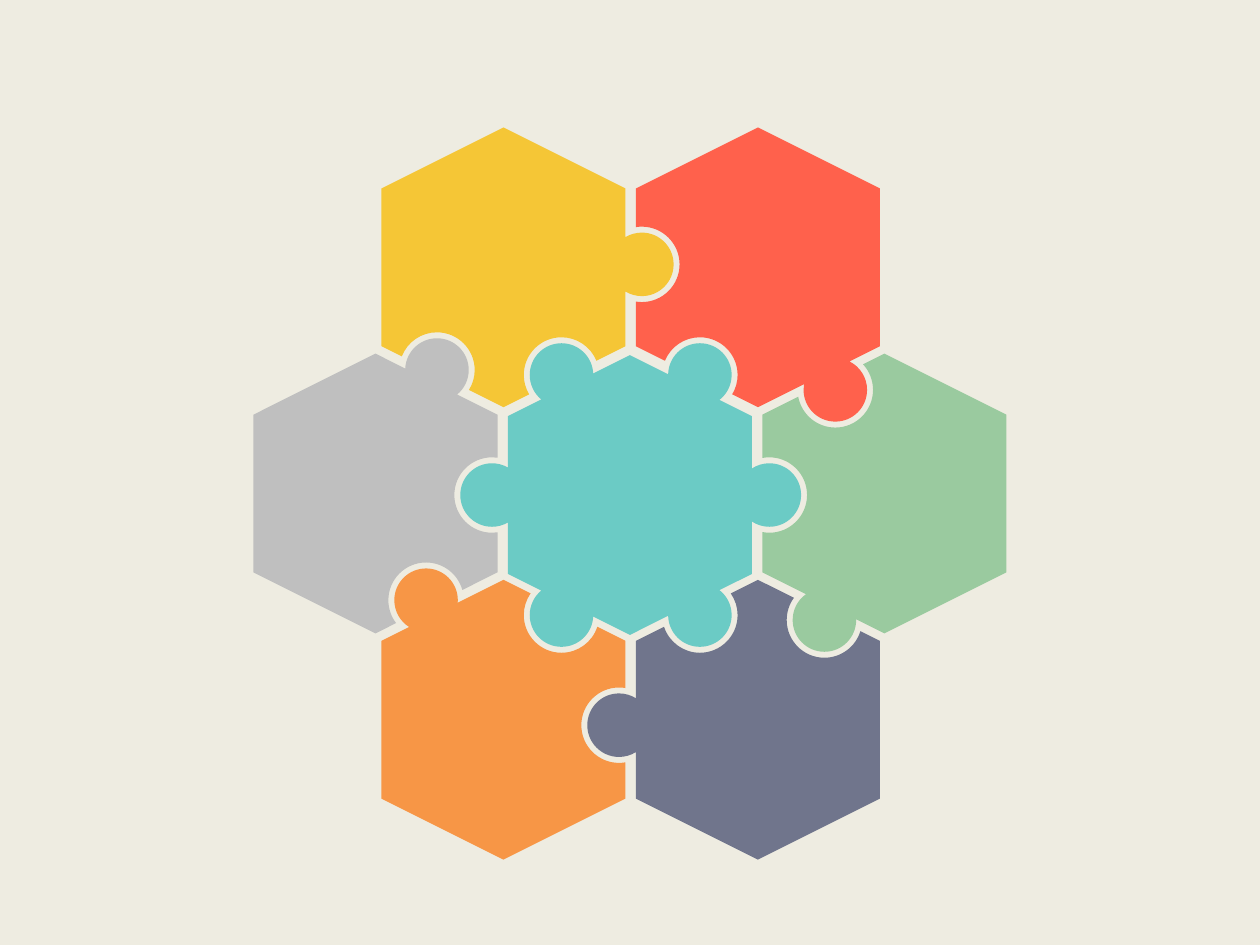
"""Build a slide with seven interlocking hexagonal puzzle pieces."""
from math import atan2, ceil, cos, dist, floor, hypot, pi, sin, sqrt, tan, tau

from lxml.etree import SubElement
from pptx import Presentation
from pptx.dml.color import RGBColor
from pptx.oxml.ns import qn
from pptx.util import Cm

CREAM = RGBColor(0xEE, 0xEC, 0xE1)
RED = RGBColor(0xFF, 0x61, 0x4C)
YELLOW = RGBColor(0xF5, 0xC6, 0x36)
GREEN = RGBColor(0x9A, 0xCA, 0x9F)
NAVY = RGBColor(0x70, 0x75, 0x8C)
ORANGE = RGBColor(0xF7, 0x96, 0x46)
GREY = RGBColor(0xBF, 0xBF, 0xBF)
TEAL = RGBColor(0x6B, 0xCB, 0xC5)

TOP_ROW, MIDDLE_ROW, BOTTOM_ROW = 5.39, 9.95, 14.51
PIECES = {
    "red": (15.28, TOP_ROW, RED),
    "yellow": (10.15, TOP_ROW, YELLOW),
    "green": (17.83, MIDDLE_ROW, GREEN),
    "navy": (15.28, BOTTOM_ROW, NAVY),
    "orange": (10.15, BOTTOM_ROW, ORANGE),
    "grey": (7.57, MIDDLE_ROW, GREY),
    "teal": (12.7, 9.98, TEAL),
}

TOP_RIGHT, RIGHT, BOTTOM_RIGHT, BOTTOM_LEFT, LEFT, TOP_LEFT = range(6)
KNOBS = [
    ("yellow", RIGHT, "red", (12.94, 5.33)),
    ("red", BOTTOM_RIGHT, "green", (16.84, 7.86)),
    ("green", BOTTOM_LEFT, "navy", (16.62, 12.5)),
    ("navy", LEFT, "orange", (12.48, 14.62)),
    ("orange", TOP_LEFT, "grey", (8.59, 12.1)),
    ("grey", TOP_RIGHT, "yellow", (8.81, 7.46)),
    ("teal", TOP_RIGHT, "red", (14.11, 7.56)),
    ("teal", RIGHT, "green", (15.51, 9.98)),
    ("teal", BOTTOM_RIGHT, "navy", (14.11, 12.4)),
    ("teal", BOTTOM_LEFT, "orange", (11.32, 12.4)),
    ("teal", LEFT, "grey", (9.92, 9.98)),
    ("teal", TOP_LEFT, "yellow", (11.32, 7.56)),
]
HALF_WIDTH, HALF_HEIGHT, SHOULDER = 2.46, 2.82, 1.59
KNOB_RADIUS, SOCKET_RADIUS = 0.64, 0.76


def hexagon(x, y):
    """Return the corners clockwise from the top."""
    left, right = x - HALF_WIDTH, x + HALF_WIDTH
    return [(x, y - HALF_HEIGHT), (right, y - SHOULDER), (right, y + SHOULDER),
            (x, y + HALF_HEIGHT), (left, y + SHOULDER), (left, y - SHOULDER)]


def joint_arc(start, end, centre, radius, outward):
    """Return the first point of an arc and its Bezier curves, split at quadrants."""
    length = dist(start, end)
    ux, uy = (end[0] - start[0]) / length, (end[1] - start[1]) / length
    dx, dy = centre[0] - start[0], centre[1] - start[1]
    along = dx * ux + dy * uy
    foot = (ux * along - dx, uy * along - dy)
    half_chord = sqrt(radius ** 2 - hypot(*foot) ** 2)
    first = atan2(foot[1] - uy * half_chord, foot[0] - ux * half_chord)
    last = atan2(foot[1] + uy * half_chord, foot[0] + ux * half_chord)
    last = first + (last - first) % tau - (0 if outward else tau)

    low, high = sorted((first, last))
    quadrants = range(floor(low / (pi / 2)) + 1, ceil(high / (pi / 2)))
    stops = sorted([low, *(q * pi / 2 for q in quadrants), high], reverse=not outward)

    def on_circle(angle, lean=0):
        return (centre[0] + radius * (cos(angle) - lean * sin(angle)),
                centre[1] + radius * (sin(angle) + lean * cos(angle)))

    curves = []
    for begin, finish in zip(stops, stops[1:]):
        lean = 4 / 3 * tan((finish - begin) / 4)
        curves.append([on_circle(begin, lean), on_circle(finish, -lean), on_circle(finish)])
    return on_circle(first), curves


def piece_outline(corners, joints):
    """Return steps of one point for a line and three points for a curve."""
    steps = []
    for edge, corner in enumerate(corners):
        steps.append([corner])
        if edge in joints:
            entry, curves = joint_arc(corner, corners[(edge + 1) % 6], *joints[edge])
            steps += [[entry], *curves]
    return steps


def add_piece(slide, steps, color):
    points = [(Cm(x), Cm(y)) for step in steps for x, y in step]
    builder = slide.shapes.build_freeform(*points[0])
    builder.add_line_segments(points[1:], close=True)
    piece = builder.convert_to_shape()
    piece.shadow.inherit = False
    piece.fill.solid()
    piece.fill.fore_color.rgb = color
    piece.line.fill.background()

    outline = next(piece._element.iter(qn("a:path")))
    segments = iter(list(outline))
    for step in steps:
        parts = [next(segments) for _ in step]
        if len(parts) == 3:
            curve = SubElement(outline, qn("a:cubicBezTo"))
            parts[0].addprevious(curve)
            for part in parts:
                curve.append(part[0])
                outline.remove(part)


def main():
    presentation = Presentation()
    presentation.slide_width, presentation.slide_height = Cm(25.4), Cm(19.05)
    slide = presentation.slides.add_slide(presentation.slide_layouts[6])
    slide.background.fill.solid()
    slide.background.fill.fore_color.rgb = CREAM

    joints = {name: {} for name in PIECES}
    for owner, edge, neighbour, centre in KNOBS:
        joints[owner][edge] = (centre, KNOB_RADIUS, True)
        joints[neighbour][(edge + 3) % 6] = (centre, SOCKET_RADIUS, False)

    for name, (x, y, color) in PIECES.items():
        add_piece(slide, piece_outline(hexagon(x, y), joints[name]), color)
    presentation.save("out.pptx")


if __name__ == "__main__":
    main()
